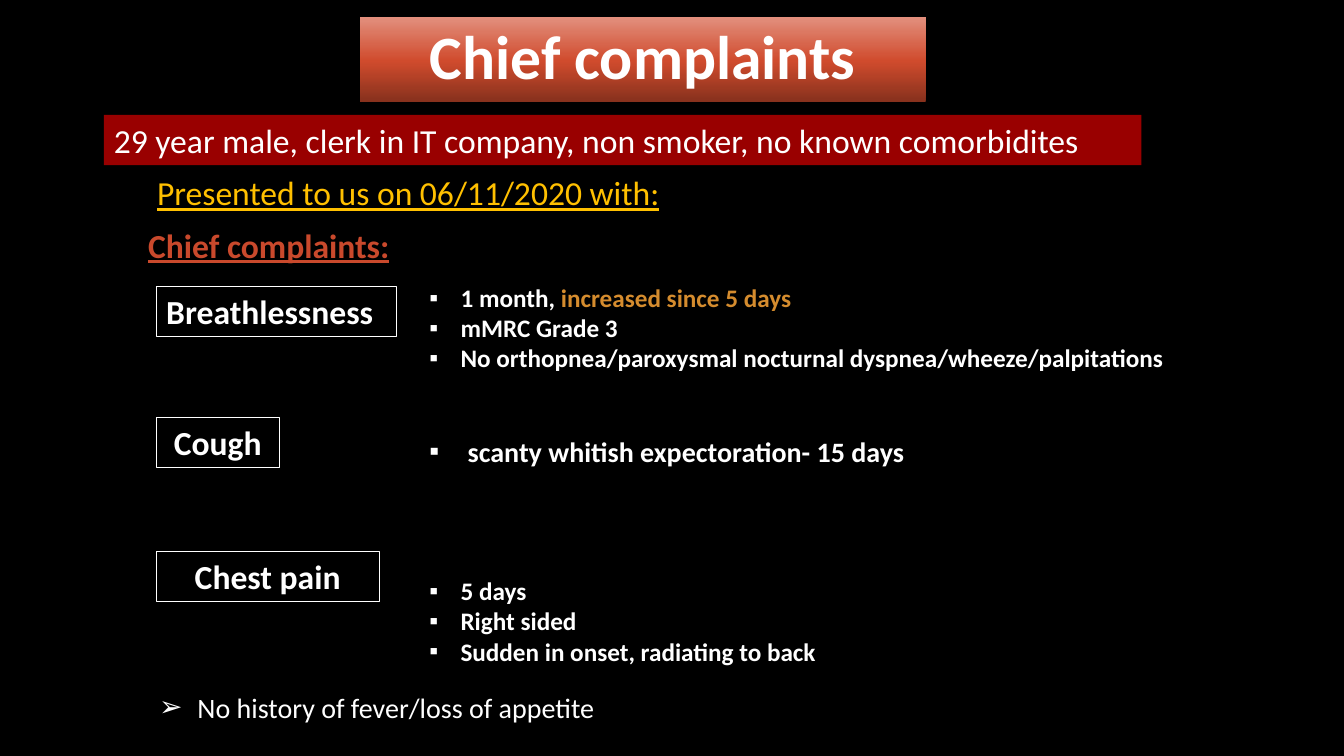
import copy
from dataclasses import dataclass
from typing import Optional

import pptx
import pptx.dml.color
import pptx.enum.shapes
import pptx.enum.text
import pptx.oxml.ns
import pptx.util
from lxml import etree

Inches = pptx.util.Inches
Pt = pptx.util.Pt
RGB = pptx.dml.color.RGBColor.from_string
qn = pptx.oxml.ns.qn
ALIGN = pptx.enum.text.PP_ALIGN
ANCHOR = pptx.enum.text.MSO_ANCHOR


@dataclass(frozen=True)
class Theme:
    font: str = "Calibri"
    bullet_font: str = "Arial"
    background: str = "000000"
    text: str = "FFFFFF"
    banner: str = "990000"
    gold: str = "FFC000"
    rust: str = "C9492C"
    amber: str = "D58C2E"
    title_stops: tuple = ((0, "87311D"), (0.48, "D04B2D"), (1, "E28F7D"))
    title_size: int = 44
    heading_size: int = 24
    note_size: int = 20
    detail_size: int = 18


THEME = Theme()


@dataclass(frozen=True)
class Run:
    text: str
    color: str = THEME.text


@dataclass(frozen=True)
class Para:
    runs: tuple[Run, ...]
    spacing: Optional[float] = None


@dataclass(frozen=True)
class Block:
    at: tuple[float, float, float, float]
    paras: tuple[Para, ...]
    size: int = THEME.heading_size
    bold: bool = False
    underline: bool = False
    align: ALIGN = ALIGN.LEFT
    anchor: ANCHOR = ANCHOR.TOP
    bullet: str = ""
    indent: float = 0
    fill: str = ""
    stops: tuple = ()
    line: float = 0


def line_of(text: str, color: str = THEME.text, spacing: Optional[float] = None) -> Para:
    return Para((Run(text, color),), spacing)


def label(text: str, top: float, width: float, line: float = 0.75,
          align: ALIGN = ALIGN.CENTER) -> Block:
    return Block((1.55, top, width, 0.5), (line_of(text),), bold=True, align=align, line=line)


def details(top: float, width: float, height: float, *paras: Para,
            size: int = THEME.detail_size, indent: float = 0.31) -> Block:
    return Block((4.16, top, width, height), paras, size, True, bullet="▪", indent=indent)


BLOCKS = (
    Block((3.57, 0.17, 5.61, 0.84), (line_of("Chief complaints", spacing=0.9),),
          THEME.title_size, True, align=ALIGN.CENTER, anchor=ANCHOR.MIDDLE,
          stops=THEME.title_stops),
    label("Breathlessness", 2.84, 2.38, 1, ALIGN.LEFT),
    label("Cough", 4.14, 1.22),
    label("Chest pain", 5.47, 2.21),
    Block((1.03, 1.14, 10.29, 0.5),
          (line_of("29 year male, clerk in IT company, non smoker, no known comorbidites"),),
          fill=THEME.banner),
    details(2.75, 8.78, 1.31,
            Para((Run("1 month, "), Run("increased since 5 days", THEME.amber))),
            line_of("mMRC Grade 3"),
            line_of("No orthopnea/paroxysmal nocturnal dyspnea/wheeze/palpitations")),
    details(4.26, 5.01, 0.74, line_of("scanty whitish expectoration- 15 days"),
            size=THEME.note_size, indent=0.38),
    details(5.45, 6.45, 1.52, line_of("5 days", spacing=1.7), line_of("Right sided"),
            line_of("Sudden in onset, radiating to back")),
    Block((0.95, 1.66, 6.2, 0.5),
          (line_of("Presented to us on 06/11/2020 with:", THEME.gold),),
          underline=True, align=ALIGN.CENTER),
    Block((1.37, 2.18, 2.98, 0.5), (line_of("Chief complaints:", THEME.rust),),
          bold=True, underline=True),
    Block((1.48, 6.8, 4.65, 0.5), (line_of("No history of fever/loss of appetite"),),
          THEME.note_size, bullet="➢", indent=0.38),
)


def fill_gradient(sp: pptx.shapes.autoshape.Shape, stops: tuple) -> None:
    sp.fill.gradient()
    sp.fill.gradient_angle = 90
    gs_list = next(sp.fill._xPr.iter(qn("a:gsLst")))
    gs_list.append(copy.deepcopy(gs_list[0]))
    for stop, (position, color) in zip(sp.fill.gradient_stops, stops):
        stop.position = position
        stop.color.rgb = RGB(color)


def add_bullet(p: pptx.text.text._Paragraph, char: str, indent: float) -> None:
    ppr = p._p.get_or_add_pPr()
    ppr.set("marL", str(Inches(indent)))
    ppr.set("indent", str(-Inches(indent)))
    etree.SubElement(ppr, qn("a:buFont")).set("typeface", THEME.bullet_font)
    etree.SubElement(ppr, qn("a:buChar")).set("char", char)


def add_block(s: pptx.slide.Slide, block: Block) -> None:
    box = [Inches(v) for v in block.at]
    if block.fill or block.stops or block.line:
        sp = s.shapes.add_shape(pptx.enum.shapes.MSO_SHAPE.RECTANGLE, *box)
        sp.shadow.inherit = False
    else:
        sp = s.shapes.add_textbox(*box)
    if block.stops:
        fill_gradient(sp, block.stops)
    elif block.fill:
        sp.fill.solid()
        sp.fill.fore_color.rgb = RGB(block.fill)
    else:
        sp.fill.background()
    if block.line:
        sp.line.color.rgb = RGB(THEME.text)
        sp.line.width = Pt(block.line)
    else:
        sp.line.fill.background()
    tf = sp.text_frame
    tf.word_wrap = True
    tf.vertical_anchor = block.anchor
    for i, para in enumerate(block.paras):
        p = tf.add_paragraph() if i else tf.paragraphs[0]
        p.alignment = block.align
        if para.spacing:
            p.line_spacing = para.spacing
        if block.bullet:
            add_bullet(p, block.bullet, block.indent)
        for run in para.runs:
            r = p.add_run()
            r.text = run.text
            r.font.name = THEME.font
            r.font.size = Pt(block.size)
            r.font.bold = block.bold
            r.font.underline = block.underline
            r.font.color.rgb = RGB(run.color)


def main() -> None:
    prs = pptx.Presentation()
    prs.slide_width = Inches(13.33)
    prs.slide_height = Inches(7.5)
    s = prs.slides.add_slide(prs.slide_layouts[6])
    s.background.fill.solid()
    s.background.fill.fore_color.rgb = RGB(THEME.background)
    for block in BLOCKS:
        add_block(s, block)
    prs.save("out.pptx")


if __name__ == "__main__":
    main()
